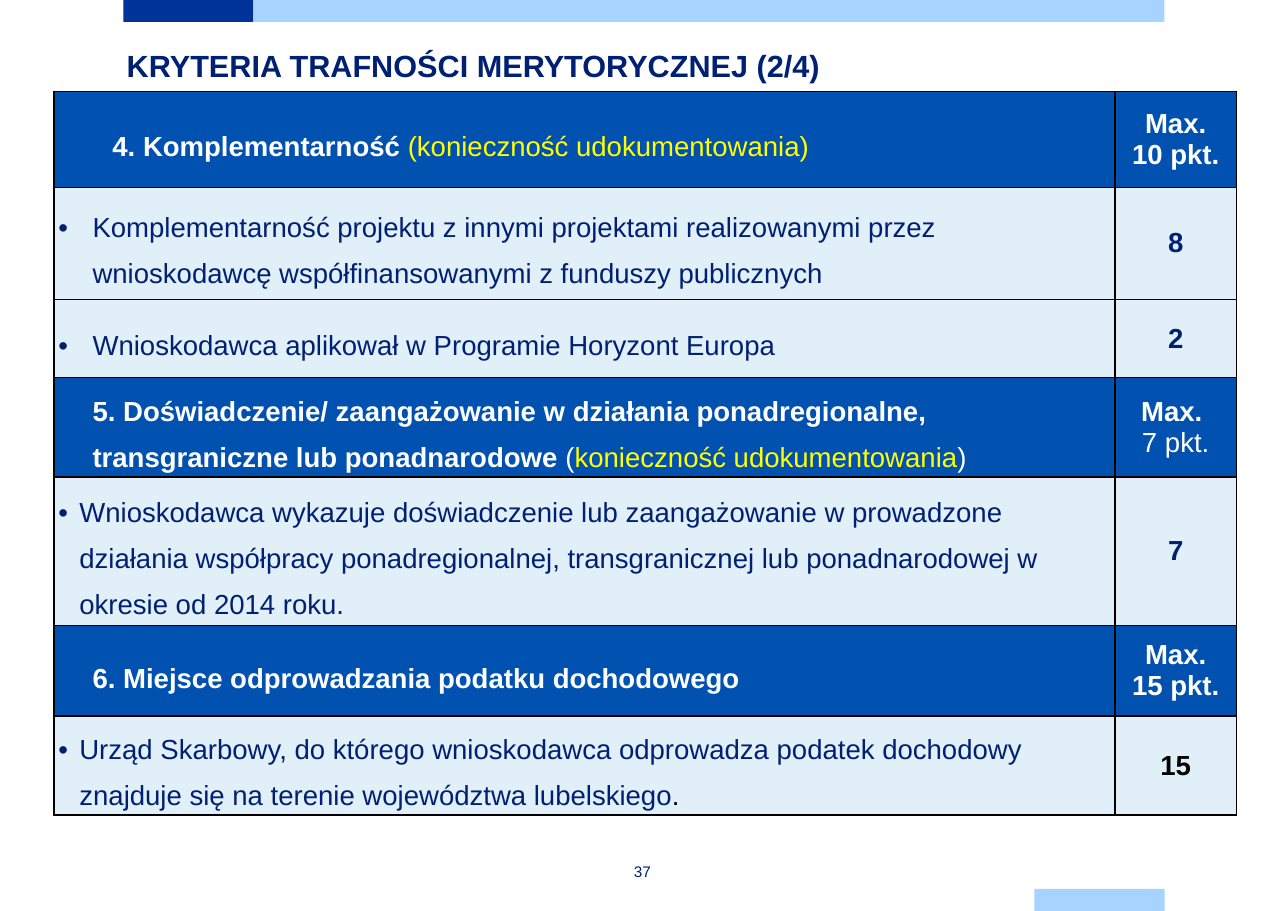
import pptx
import pptx.util
import pptx.dml.color
import pptx.enum.shapes
import pptx.enum.text
import pptx.oxml.ns
import lxml.etree

Pt = pptx.util.Pt
RGBColor = pptx.dml.color.RGBColor
ALIGN = pptx.enum.text.PP_ALIGN
MIDDLE = pptx.enum.text.MSO_ANCHOR.MIDDLE

DARK_BLUE = RGBColor(0x00, 0x33, 0x99)
LIGHT_BLUE = RGBColor(0xA6, 0xD3, 0xFF)
NAVY = RGBColor(0x00, 0x20, 0x73)
HEADER_BLUE = RGBColor(0x00, 0x51, 0xB0)
PALE_BLUE = RGBColor(0xE1, 0xEF, 0xF9)
WHITE = RGBColor(0xFF, 0xFF, 0xFF)
YELLOW = RGBColor(0xFF, 0xFF, 0x00)
BLACK = RGBColor(0x00, 0x00, 0x00)

COLUMN_WIDTHS = (693.4, 79.2)

# Each row: height, is header, indent, spans of the criterion,
# paragraphs of the score; a span is (text, colour, bold)
ROWS = [
    (62.6, True, 35.3,
     [("4. Komplementarność ", WHITE, True),
      ("(konieczność udokumentowania)", YELLOW, False)],
     [("Max. 10 pkt.", WHITE, True)]),
    (73.4, False, 22.3,
     [("Komplementarność projektu z innymi projektami realizowanymi przez "
       "wnioskodawcę współfinansowanymi z funduszy publicznych", NAVY, False)],
     [("8", NAVY, True)]),
    (51.1, False, 22.3,
     [("Wnioskodawca aplikował w Programie Horyzont Europa", NAVY, False)],
     [("2", NAVY, True)]),
    (62.6, True, 22.3,
     [("5. Doświadczenie/ zaangażowanie w działania ponadregionalne, "
       "transgraniczne lub ponadnarodowe ", WHITE, True),
      ("(", WHITE, False),
      ("konieczność udokumentowania", YELLOW, False),
      (")", WHITE, False)],
     [("Max. ", WHITE, True), ("7 pkt.", WHITE, False)]),
    (96.5, False, 13.7,
     [("Wnioskodawca wykazuje doświadczenie lub zaangażowanie w prowadzone "
       "działania współpracy ponadregionalnej, transgranicznej lub "
       "ponadnarodowej w okresie od 2014 roku.", NAVY, False)],
     [("7", NAVY, True)]),
    (59, True, 22.3,
     [("6. Miejsce odprowadzania podatku dochodowego", WHITE, True)],
     [("Max. 15 pkt.", WHITE, True)]),
    (62.6, False, 13.7,
     [("Urząd Skarbowy, do którego wnioskodawca odprowadza podatek dochodowy "
       "znajduje się na terenie województwa lubelskiego", NAVY, False),
      (".", BLACK, False)],
     [("15", BLACK, True)]),
]


def add_element(parent, tag, **attributes):
    return lxml.etree.SubElement(parent, pptx.oxml.ns.qn(tag), attributes)


def write_para(para, spans, size=18, align=ALIGN.LEFT, spacing=None,
               indent=0, bullet=False):
    properties = para._p.get_or_add_pPr()
    properties.set("marL", str(Pt(indent)))
    properties.set("indent", str(Pt(-indent if bullet else 0)))
    if bullet:
        add_element(properties, "a:buFont", typeface="Arial")
        add_element(properties, "a:buChar", char="•")
    para.alignment = align
    if spacing:
        para.line_spacing = spacing
    for text, color, bold in spans:
        span = para.add_run()
        span.text = text
        span.font.name = "Arial"
        span.font.size = Pt(size)
        span.font.bold = bold
        span.font.color.rgb = color


def add_bar(page, left, top, width, color):
    bar = page.shapes.add_shape(pptx.enum.shapes.MSO_SHAPE.RECTANGLE,
                                Pt(left), Pt(top), Pt(width), Pt(14.4))
    bar.shadow.inherit = False
    bar.fill.solid()
    bar.fill.fore_color.rgb = color
    bar.line.fill.background()


def add_text_box(page, left, top, width, height, spans, anchor=None, **text_format):
    box = page.shapes.add_textbox(Pt(left), Pt(top), Pt(width), Pt(height))
    frame = box.text_frame
    frame.word_wrap = True
    frame.margin_left = frame.margin_right = 0
    frame.margin_top = frame.margin_bottom = 0
    frame.vertical_anchor = anchor
    write_para(frame.paragraphs[0], spans, **text_format)


def style_cell(cell, color):
    properties = cell._tc.get_or_add_tcPr()
    for side in ("a:lnL", "a:lnR", "a:lnT", "a:lnB"):
        line = add_element(properties, side, w=str(Pt(1)))
        fill = add_element(line, "a:solidFill")
        add_element(fill, "a:srgbClr", val=str(BLACK))
    cell.fill.solid()
    cell.fill.fore_color.rgb = color
    cell.vertical_anchor = MIDDLE


def add_criteria_table(page):
    height = sum(row[0] for row in ROWS)
    table = page.shapes.add_table(len(ROWS), len(COLUMN_WIDTHS), Pt(35.3), Pt(59.8),
                                  Pt(sum(COLUMN_WIDTHS)), Pt(height)).table
    table.first_row = table.horz_banding = False
    for column, width in zip(table.columns, COLUMN_WIDTHS):
        column.width = Pt(width)

    for index, (height, is_header, indent, spans, scores) in enumerate(ROWS):
        table.rows[index].height = Pt(height)
        criterion, score = table.cell(index, 0), table.cell(index, 1)
        for cell in (criterion, score):
            style_cell(cell, HEADER_BLUE if is_header else PALE_BLUE)

        criterion.margin_left = criterion.margin_right = Pt(2.9)
        criterion.margin_top = criterion.margin_bottom = 0
        write_para(criterion.text_frame.paragraphs[0], spans, spacing=1.5,
                   indent=indent, bullet=not is_header)

        frame = score.text_frame
        for number, span in enumerate(scores):
            para = frame.add_paragraph() if number else frame.paragraphs[0]
            write_para(para, [span], align=ALIGN.CENTER)


def main():
    deck = pptx.Presentation()
    deck.slide_width, deck.slide_height = Pt(841.7), Pt(595.4)
    page = deck.slides.add_slide(deck.slide_layouts[6])

    # Bars at the page edges
    add_bar(page, 80.6, 0, 85, DARK_BLUE)
    add_bar(page, 165.6, 0, 595.4, LIGHT_BLUE)
    add_bar(page, 676, 581, 85, LIGHT_BLUE)

    # Title
    add_text_box(page, 82.8, 25.9, 680.4, 33.8,
                 [("KRYTERIA TRAFNOŚCI MERYTORYCZNEJ (2/4)", NAVY, True)],
                 size=20, spacing=Pt(28.6))

    # Criteria and scores
    add_criteria_table(page)

    # Page number
    add_text_box(page, 377.3, 562.3, 85, 14.4, [("37", NAVY, False)],
                 anchor=MIDDLE, size=10, align=ALIGN.CENTER)

    deck.save("out.pptx")


if __name__ == "__main__":
    main()
